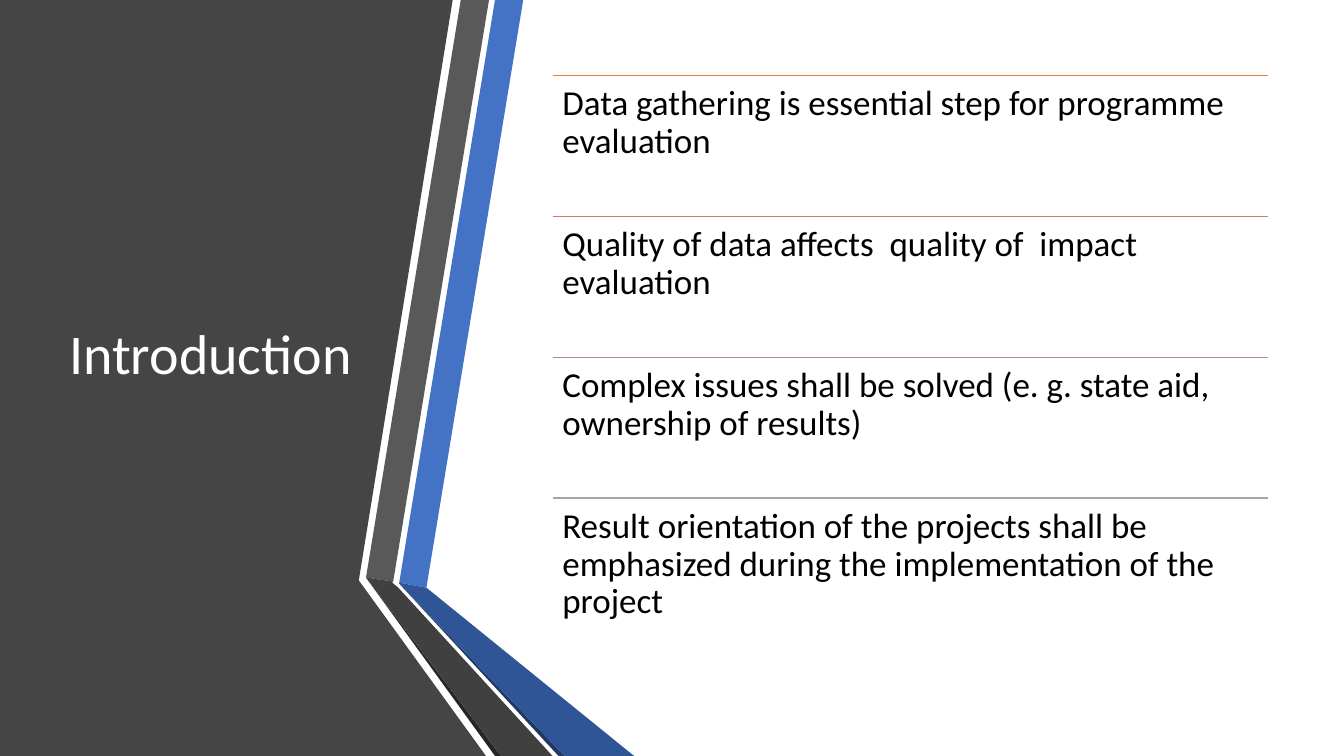
from lxml.etree import SubElement
from pptx import Presentation
from pptx.dml.color import RGBColor
from pptx.enum.shapes import MSO_CONNECTOR
from pptx.enum.text import MSO_ANCHOR, PP_ALIGN
from pptx.oxml.ns import qn
from pptx.util import Inches, Pt

COLORS = {
    "white": "FFFFFF",
    "black": "000000",
    "panel": "454545",
    "blue": "4472C4",
    "blue_fold": "2F5597",
    "blue_edge": "203864",
    "gray": "595959",
    "gray_fold": "404040",
    "gray_edge": "262626",
    "rule_1": "ED7D31",
    "rule_2": "D17B5C",
    "rule_3": "B98A82",
    "rule_4": "A5A5A5",
}

# Outlines of the panel and the folded ribbons, in inches, back to front
OUTLINES = [
    ("panel", [(0, 0), (4.49, 0), (3.56, 5.75), (3.56, 5.76), (4.82, 7.5), (0, 7.5)]),
    ("blue", [(3.96, 5.78), (4.23, 5.83), (5.19, 0), (4.91, 0)]),
    ("gray", [(4.85, 0), (4.57, 0), (3.63, 5.73), (3.9, 5.77)]),
    ("gray_edge", [(3.63, 5.73), (4.91, 7.5), (4.97, 7.5)]),
    ("blue_edge", [(3.96, 5.79), (5.54, 7.5), (5.6, 7.5)]),
    ("blue_fold", [(3.96, 5.79), (5.6, 7.5), (6.29, 7.5), (4.23, 5.83), (3.96, 5.78)]),
    ("gray_fold", [(5.48, 7.5), (3.95, 5.83), (3.89, 5.78), (3.9, 5.77),
                   (3.63, 5.73), (4.97, 7.5)]),
]

POINTS = [
    "Data gathering is essential step for programme evaluation",
    "Quality of data affects  quality of  impact evaluation",
    "Complex issues shall be solved (e. g. state aid, ownership of results)",
    "Result orientation of the projects shall be emphasized during the "
    "implementation of the project",
]


def color(name):
    return RGBColor.from_string(COLORS[name])


def write_text(frame, text, *, font, size, fill, after=0):
    para = frame.paragraphs[0]
    para.alignment = PP_ALIGN.LEFT
    para.line_spacing = 0.9
    para.space_after = Pt(after)
    span = para.add_run()
    span.text = text
    span.font.name = font
    span.font.size = Pt(size)
    span.font.color.rgb = color(fill)


class SlideBuilder:
    font = "Calibri"

    def __init__(self, page):
        self.page = page

    def outline(self, points, fill):
        corners = [(Inches(x), Inches(y)) for x, y in points]
        builder = self.page.shapes.build_freeform(*corners[0])
        builder.add_line_segments(corners[1:], close=True)
        shape = builder.convert_to_shape()
        shape.shadow.inherit = False
        shape.fill.solid()
        shape.fill.fore_color.rgb = color(fill)
        shape.line.fill.background()

    def rule(self, left, top, width, stroke):
        line = self.page.shapes.add_connector(
            MSO_CONNECTOR.STRAIGHT,
            Inches(left), Inches(top), Inches(left + width), Inches(top))
        line.line.color.rgb = color(stroke)
        line.line.width = Pt(1)
        SubElement(line.element.spPr, qn("a:effectLst"))

    def text(self, text, left, top, width, height, *, inset=0.1,
             anchor=MSO_ANCHOR.TOP, **style):
        box = self.page.shapes.add_textbox(
            Inches(left), Inches(top), Inches(width), Inches(height))
        frame = box.text_frame
        frame.word_wrap = True
        frame.vertical_anchor = anchor
        frame.margin_left = frame.margin_right = Inches(0.1)
        frame.margin_top = frame.margin_bottom = Inches(inset)
        write_text(frame, text, font=self.font, **style)


def main():
    deck = Presentation()
    deck.slide_width, deck.slide_height = Inches(13.33), Inches(7.5)
    page = deck.slides.add_slide(deck.slide_layouts[6])
    page.background.fill.solid()
    page.background.fill.fore_color.rgb = color("white")
    builder = SlideBuilder(page)

    # Dark panel and ribbons
    for fill, points in OUTLINES:
        builder.outline(points, fill)

    # Title
    builder.text("Introduction", 0.59, 0.75, 3.04, 5.58, inset=0.05,
                 anchor=MSO_ANCHOR.MIDDLE, size=40, fill="white")

    # Ruled list of points
    left, first_top, width, row_height = 5.48, 0.75, 7.1, 1.397
    for index, point in enumerate(POINTS):
        top = first_top + index * row_height
        builder.rule(left, top, width, f"rule_{index + 1}")
        builder.text(point, left, top, width, row_height,
                     size=25, fill="black", after=8.75)

    deck.save("out.pptx")


if __name__ == "__main__":
    main()
